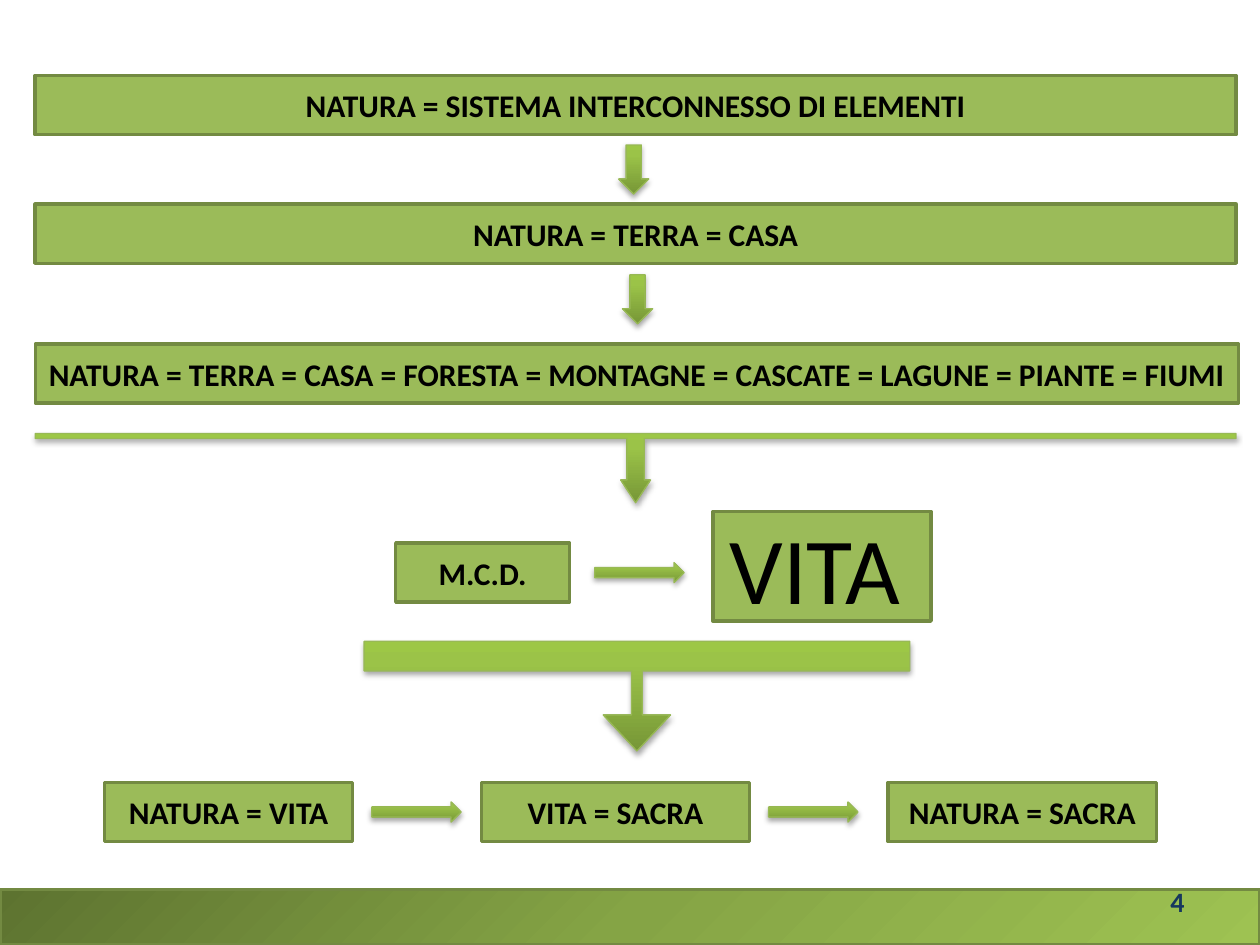
from pptx import Presentation, util as u
from pptx.dml.color import RGBColor
from pptx.enum import shapes, text
from pptx.oxml import parse_xml
from pptx.oxml.ns import nsdecls

THEME = {
    "font": "Calibri", "ink": "000000", "navy": "17375E",
    "box": "9BBB59", "edge": "738A42", "arrow_edge": "98B955",
    "arrow": [(0, "779737"), (80, "9BC348"), (100, "9DC746")],
    "footer": [(0, "5D7330"), (50, "85A445"), (100, "9EC252")],
    "label": 18, "number": 16, "hero": 54,
}
W, H = 10, 7.5
MARGIN, FULL, BOX_H = 0.28, 9.53, 0.47
ARROW_W, ARROW_H = 0.71, 0.16          # horizontal arrows
DROP_W, DROP_H = 0.24, 0.39            # vertical arrows
FOOTER_H = 0.44
MCD_Y, CHAIN_Y = 4.545, 6.445          # centre lines of the two rows

# Content: full-width statements (text, top, width)
STATEMENTS = [
    ("NATURA = SISTEMA INTERCONNESSO DI ELEMENTI", 0.6, FULL),
    ("NATURA = TERRA = CASA", 1.62, FULL),
    ("NATURA = TERRA = CASA = FORESTA = MONTAGNE = CASCATE = LAGUNE = PIANTE = FIUMI",
     2.73, 9.55),
]
# Smaller boxes (text, left, width, centre line)
STEPS = [
    ("M.C.D.", 3.14, 1.38, MCD_Y),
    ("NATURA = VITA", 0.83, 1.97, CHAIN_Y),
    ("VITA = SACRA", 3.82, 2.13, CHAIN_Y),
    ("NATURA = SACRA", 7.05, 2.13, CHAIN_Y),
]
HERO = ("VITA ", (5.66, 4.06, 1.73, 0.87))
DROPS = [(4.91, 1.15), (4.94, 2.18)]
LINKS = [(4.72, MCD_Y), (2.95, CHAIN_Y), (6.1, CHAIN_Y)]
CALLOUTS = [
    ((MARGIN, 3.44, FULL, 0.55), (0.25, 0.215, 0.328, 0.074)),
    ((2.89, 5.09, 4.33, 0.87), (0.096, 0.307, 0.328, 0.27)),
]
PAGE = "4"

SHAPE = shapes.MSO_SHAPE
rgb = RGBColor.from_string

prs = Presentation()
prs.slide_width, prs.slide_height = u.Inches(W), u.Inches(H)
s = prs.slides.add_slide(prs.slide_layouts[6])


def add_shape(kind, box, edge, width):
    sp = s.shapes.add_shape(kind, *map(u.Inches, box))
    sp.shadow.inherit = False
    sp.line.color.rgb, sp.line.width = rgb(edge), u.Pt(width)
    return sp


def set_gradient(sp, stops, angle):
    sp.fill.background()
    gs = "".join(f'<a:gs pos="{pos * 1000}"><a:srgbClr val="{c}"/></a:gs>' for pos, c in stops)
    grad = parse_xml(f'<a:gradFill rotWithShape="1" {nsdecls("a")}><a:gsLst>{gs}</a:gsLst>'
                     f'<a:lin ang="{angle * 60000}" scaled="0"/></a:gradFill>')
    props = sp.element.spPr
    props.replace(props.find("{*}noFill"), grad)


def add_arrow(kind, box, adjustments=()):
    sp = add_shape(kind, box, THEME["arrow_edge"], 0.75)
    for i, value in enumerate(adjustments):
        sp.adjustments[i] = value
    set_gradient(sp, THEME["arrow"], 270)
    sp.element.spPr.find("{*}effectLst").append(parse_xml(
        f'<a:outerShdw {nsdecls("a")} blurRad="{u.Pt(3.1)}" dist="{u.Pt(1.8)}" dir="5400000" '
        'rotWithShape="0"><a:srgbClr val="000000"><a:alpha val="35000"/></a:srgbClr>'
        '</a:outerShdw>'))


def style(r, size, color, bold=None):
    r.font.name, r.font.size, r.font.bold = THEME["font"], u.Pt(size), bold
    r.font.color.rgb = rgb(color)


def add_box(box):
    sp = add_shape(SHAPE.RECTANGLE, box, THEME["edge"], 2)
    sp.fill.solid()
    sp.fill.fore_color.rgb = rgb(THEME["box"])
    tf = sp.text_frame
    tf.word_wrap = False
    tf.vertical_anchor = text.MSO_ANCHOR.MIDDLE
    p = tf.paragraphs[0]
    p.alignment = text.PP_ALIGN.CENTER
    return p


def add_label(words, box):
    p = add_box(box)
    p.text = words
    style(p.runs[0], THEME["label"], THEME["ink"], True)


# Footer band
footer = add_shape(SHAPE.RECTANGLE, (0, H - FOOTER_H, W, FOOTER_H), THEME["edge"], 2)
set_gradient(footer, THEME["footer"], 45)

# Arrows and callouts
for x, y in DROPS:
    add_arrow(SHAPE.DOWN_ARROW, (x, y, DROP_W, DROP_H))
for x, mid in LINKS:
    add_arrow(SHAPE.RIGHT_ARROW, (x, mid - ARROW_H / 2, ARROW_W, ARROW_H))
for box, adjustments in CALLOUTS:
    add_arrow(SHAPE.DOWN_ARROW_CALLOUT, box, adjustments)

# Labelled boxes
for words, y, width in STATEMENTS:
    add_label(words, (MARGIN, y, width, BOX_H))
for words, x, width, mid in STEPS:
    add_label(words, (x, mid - BOX_H / 2, width, BOX_H))

# Large word, led by a small space
words, box = HERO
p = add_box(box)
for part, size, color in ((" ", THEME["label"], THEME["navy"]),
                          (words, THEME["hero"], THEME["ink"])):
    r = p.add_run()
    r.text = part
    style(r, size, color)

# Slide number
tf = s.shapes.add_textbox(*map(u.Inches, (7.17, 6.95, 2.33, 0.4))).text_frame
tf.word_wrap = True
tf.vertical_anchor = text.MSO_ANCHOR.MIDDLE
tf.text = PAGE
p = tf.paragraphs[0]
p.alignment = text.PP_ALIGN.RIGHT
style(p.runs[0], THEME["number"], THEME["navy"], True)

prs.save("out.pptx")
